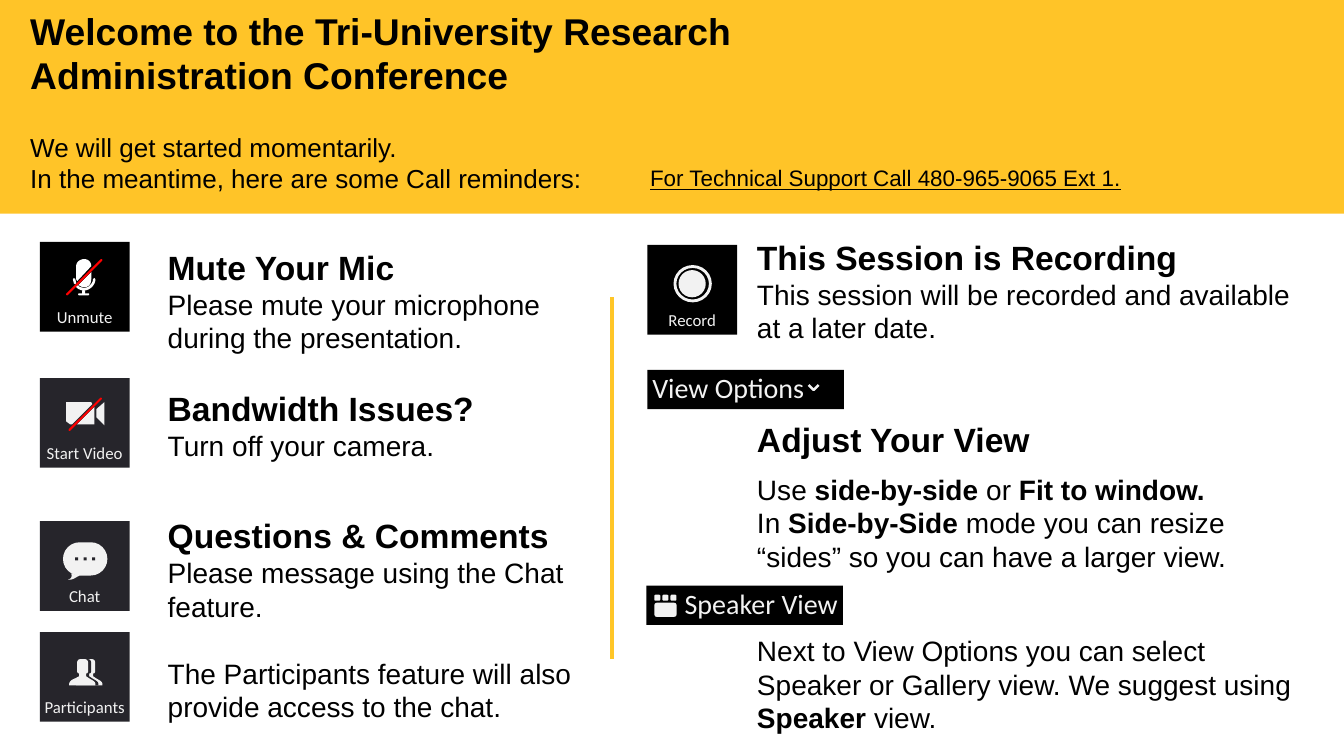
from typing import NamedTuple

from lxml.etree import SubElement
from pptx import Presentation
from pptx.dml.color import RGBColor
from pptx.enum.shapes import MSO_CONNECTOR, MSO_SHAPE as SHAPE
from pptx.enum.text import MSO_ANCHOR as ANCHOR, PP_ALIGN as ALIGN
from pptx.oxml.ns import qn
from pptx.util import Inches, Pt

COLS, ROWS, CELL = 1333, 750, Inches(0.01)  # grid of hundredths of an inch


class Theme:
    gold, rule, red = "FFC428", "FFC627", "FF0000"
    dark, black, white, pale = "26252B", "000000", "FFFFFF", "F2F2F2"
    font, ui_font = "Arial", "Calibri"
    title, heading, body, lead, support, label = 26.6, 24, 20, 18.6, 16, 12


class Box(NamedTuple):
    x: float
    y: float
    w: float
    h: float

    def sub(self, dx, dy, w, h):
        return Box(self.x + dx, self.y + dy, w, h)

    def emu(self):
        return [round(v * CELL) for v in self]


def paint(s, fill, line=None):
    s.shadow.inherit = False
    s.fill.solid()
    s.fill.fore_color.rgb = RGBColor.from_string(fill)
    s.line.fill.background()
    if line:
        s.line.color.rgb, s.line.width = RGBColor.from_string(line), Pt(1.75)
    return s


def add_preset(shapes, kind, box, fill, adj=None, rotation=0):
    s = paint(shapes.add_shape(kind, *box.emu()), fill)
    if adj is not None:
        s.adjustments[0] = adj
    s.rotation = rotation
    return s


def bezier(p0, curve, steps=8):
    points = (p0, curve[:2], curve[2:4], curve[4:])
    for t in (i / steps for i in range(1, steps + 1)):
        weights = ((1 - t)**3, 3 * t * (1 - t)**2, 3 * t * t * (1 - t), t**3)
        yield tuple(sum(k * p[axis] for k, p in zip(weights, points)) for axis in (0, 1))


def add_outline(shapes, box, contours, fill, line=None, close=True):
    """Draw contours of points (x, y) and cubic curves (six numbers)."""
    fb = None
    for start, *steps in contours:
        pts = [start]
        for step in steps:
            pts += [step] if len(step) == 2 else bezier(pts[-1], step)
        pts = [((box.x + x) * CELL, (box.y + y) * CELL) for x, y in pts]
        if fb is None:
            fb = shapes.build_freeform(*pts[0], scale=1.0)
        else:
            fb.move_to(*pts[0])
        fb.add_line_segments(pts[1:], close=close)
    return paint(fb.convert_to_shape(), fill, line)


def set_frame(s, anchor, left, right):
    tf = s.text_frame
    tf.word_wrap, tf.vertical_anchor = True, anchor
    tf.margin_left, tf.margin_right = Inches(left), Inches(right)
    return tf


def style(p, name, size, color, align, bold=False):
    p.alignment, p.font.name, p.font.size, p.font.bold = align, name, Pt(size), bold
    p.font.color.rgb = RGBColor.from_string(color)


def write(tf, paragraphs):
    """Fill with (size, bold, gap before, text); *stars* mark bold runs."""
    for i, (size, bold, gap, text) in enumerate(paragraphs):
        p = tf.add_paragraph() if i else tf.paragraphs[0]
        p.space_before = Pt(gap)
        style(p, Theme.font, size, Theme.black, ALIGN.LEFT, bold)
        for j, part in enumerate(text.split("*")):
            if part:
                r = p.add_run()
                r.text = part
                if j % 2:
                    r.font.bold = True
    return tf


def add_button(slide, box, label, fill, size=Theme.label, align=ALIGN.CENTER, left=0, right=0):
    """Add a labelled button as a group; return the group's shapes."""
    shapes = slide.shapes.add_group_shape().shapes
    tf = set_frame(add_preset(shapes, SHAPE.RECTANGLE, box, fill), ANCHOR.BOTTOM, left, right)
    tf.text = label
    style(tf.paragraphs[0], Theme.ui_font, size, Theme.pale, align)
    return shapes


def unmute_button(slide, box):
    g = add_button(slide, box, "Unmute", Theme.black)
    add_outline(g, box, [
        [(51, 30), (51, 37), (51, 42, 48, 45, 44, 45), (42, 45, 40, 44, 39, 43), (38, 43)],
        [(44, 17), (48, 17, 51, 20, 51, 24), (37, 39), (36, 37), (36, 24),
         (36, 20, 40, 17, 44, 17)]], Theme.white)
    add_outline(g, box, [
        [(37, 44), (38, 45, 39, 46, 40, 46), (44, 47), (41, 47, 39, 46, 37, 44)],
        [(34, 37), (35, 41)],
        [(54, 37), (54, 42, 49, 47, 44, 47), (48, 46), (51, 44, 54, 41, 54, 37)]],
        Theme.white, Theme.white)
    for part, fill, adj, rotation in (((42, 48, 3, 4), Theme.white, 0.167, 0),
                                      ((38, 51, 11, 2), Theme.white, 0.5, 0),
                                      ((43, 10, 2, 50), Theme.red, 0.5, 45)):
        add_preset(g, SHAPE.ROUNDED_RECTANGLE, box.sub(*part), fill, adj, rotation)


def video_button(slide, box):
    g = add_button(slide, box, "Start Video", Theme.dark)
    add_outline(g, box, [
        [(54, 29), (54, 46), (37, 46)],
        [(26, 24), (51, 24), (52, 26), (32, 46), (30, 46), (26, 43)],
        [(64, 24), (64, 47), (56, 39), (56, 31)]], Theme.pale)
    add_preset(g, SHAPE.ROUNDED_RECTANGLE, box.sub(44, 13, 2, 46), Theme.red, 0.5, 45)


def chat_button(slide, box):
    g = add_button(slide, box, "Chat", Theme.dark)
    add_preset(g, SHAPE.ROUNDED_RECTANGLE, box.sub(23, 21, 44, 33), Theme.pale, 0.5)
    tail = [(40, 54), (36, 55, 33, 59, 28, 58), (32, 57, 32, 54, 31, 52)]
    add_outline(g, box, [tail], Theme.pale)
    for i in range(3):
        add_preset(g, SHAPE.RECTANGLE, box.sub(35 + 8.5 * i, 36, 3, 3), Theme.dark)


def participants_button(slide, box):
    g = add_button(slide, box, "Participants", Theme.dark)
    person = [(11, 0), (16, 0), (18, 0, 19, 2, 19, 4), (19, 11), (19, 12, 19, 13, 18, 14),
              (17, 14), (17, 17), (20, 19), (23, 21, 27, 22, 26, 26), (0, 26),
              (0, 20, 5, 20, 8, 18), (10, 17), (10, 14), (9, 14), (8, 13, 8, 12, 8, 11),
              (8, 4), (8, 2, 9, 0, 11, 0)]
    for dx, fill in ((36, Theme.pale), (32, Theme.dark), (29, Theme.pale)):
        add_outline(g, box.sub(dx, 27, 26, 26), [person], fill)


def record_button(slide, box):
    g = add_button(slide, box, "Record", Theme.black)
    add_preset(g, SHAPE.OVAL, box.sub(31, 25, 27, 27), Theme.pale)
    add_preset(g, SHAPE.DONUT, box.sub(26, 20, 38, 37), Theme.pale, 0.077)


def view_options_button(slide, box):
    g = add_button(slide, box, "View Options", Theme.black, Theme.body, ALIGN.LEFT, left=0.05)
    chevron = [(160, 15), (165, 20), (170, 15)]
    add_outline(g, box, [chevron], Theme.pale, Theme.pale, close=False).fill.background()


def speaker_view_button(slide, box):
    g = add_button(slide, box, "Speaker View", Theme.black, Theme.body, ALIGN.RIGHT, 0.1, 0.05)
    add_preset(g, SHAPE.ROUNDED_RECTANGLE, box.sub(8, 17, 22, 14), Theme.pale)
    for i in range(3):
        add_preset(g, SHAPE.ROUNDED_RECTANGLE, box.sub(8 + 8 * i, 9, 6, 6), Theme.pale, 0.234)


def add_text(slide, box, paragraphs):
    s = slide.shapes.add_textbox(*box.emu())
    return write(set_frame(s, ANCHOR.TOP, 0.1, 0.1), paragraphs)


def banner(slide, box):
    s = add_preset(slide.shapes, SHAPE.RECTANGLE, box, Theme.gold)
    write(set_frame(s, ANCHOR.MIDDLE, 0.3, 4.1), [
        (Theme.title, True, 0, "Welcome to the Tri-University Research Administration Conference"),
        (Theme.lead, False, 24, "We will get started momentarily."),
        (Theme.lead, False, 0, "In the meantime, here are some Call reminders:")])
    tf = add_text(slide, box.sub(635, 170, 567, 61), [
        (Theme.support, False, 0, "For Technical Support Call 480-965-9065 Ext 1.")])
    tf.paragraphs[0].font.underline = True


def left_column(slide, box):
    for button, y in ((unmute_button, 0), (video_button, 135),
                      (chat_button, 277), (participants_button, 387)):
        button(slide, box.sub(0, y, 89, 89))
    add_text(slide, box.sub(117, 0, 434, box.h), [
        (Theme.heading, True, 0, "Mute Your Mic"),
        (Theme.body, False, 0, "Please mute your microphone during the presentation."),
        (Theme.heading, True, 24, "Bandwidth Issues?"),
        (Theme.body, False, 0, "Turn off your camera."),
        (Theme.heading, True, 38, "Questions & Comments"),
        (Theme.body, False, 0, "Please message using the Chat feature."),
        (Theme.body, False, 24, "The Participants feature will also provide access to the chat.")])


def right_column(slide, box):
    record_button(slide, box.sub(0, 13, 89, 89))
    view_options_button(slide, box.sub(0, 137, 195, 39))
    speaker_view_button(slide, box.sub(-1, 351, 195, 39))
    add_text(slide, box.sub(99, 0, 556, box.h), [
        (Theme.heading, True, 0, "This Session is Recording"),
        (Theme.body, False, 0, "This session will be recorded and available at a later date."),
        (Theme.heading, True, 53, "Adjust Your View"),
        (Theme.body, False, 9.6, "Use *side-by-side* or *Fit to window.*"),
        (Theme.body, False, 0, "In *Side-by-Side *mode you can resize “sides” so you can "
         "have a larger view."),
        (Theme.body, False, 43.2, "Next to View Options you can select Speaker or Gallery view. "
         "We suggest using *Speaker *view.")])


def divider(slide, box):
    x, y, _, h = box.emu()
    c = slide.shapes.add_connector(MSO_CONNECTOR.STRAIGHT, x, y, x, y + h)
    c.line.color.rgb, c.line.width = RGBColor.from_string(Theme.rule), Pt(2.5)
    SubElement(c._element.spPr, qn("a:effectLst"))


prs = Presentation()
prs.slide_width, prs.slide_height = COLS * CELL, ROWS * CELL
s = prs.slides.add_slide(prs.slide_layouts[6])
banner(s, Box(0, -12, COLS, 224))
left_column(s, Box(39.5, 240, 550, 488))
right_column(s, Box(642, 230, 655, 508))
divider(s, Box(607, 295, 0, 359))
prs.save("out.pptx")
